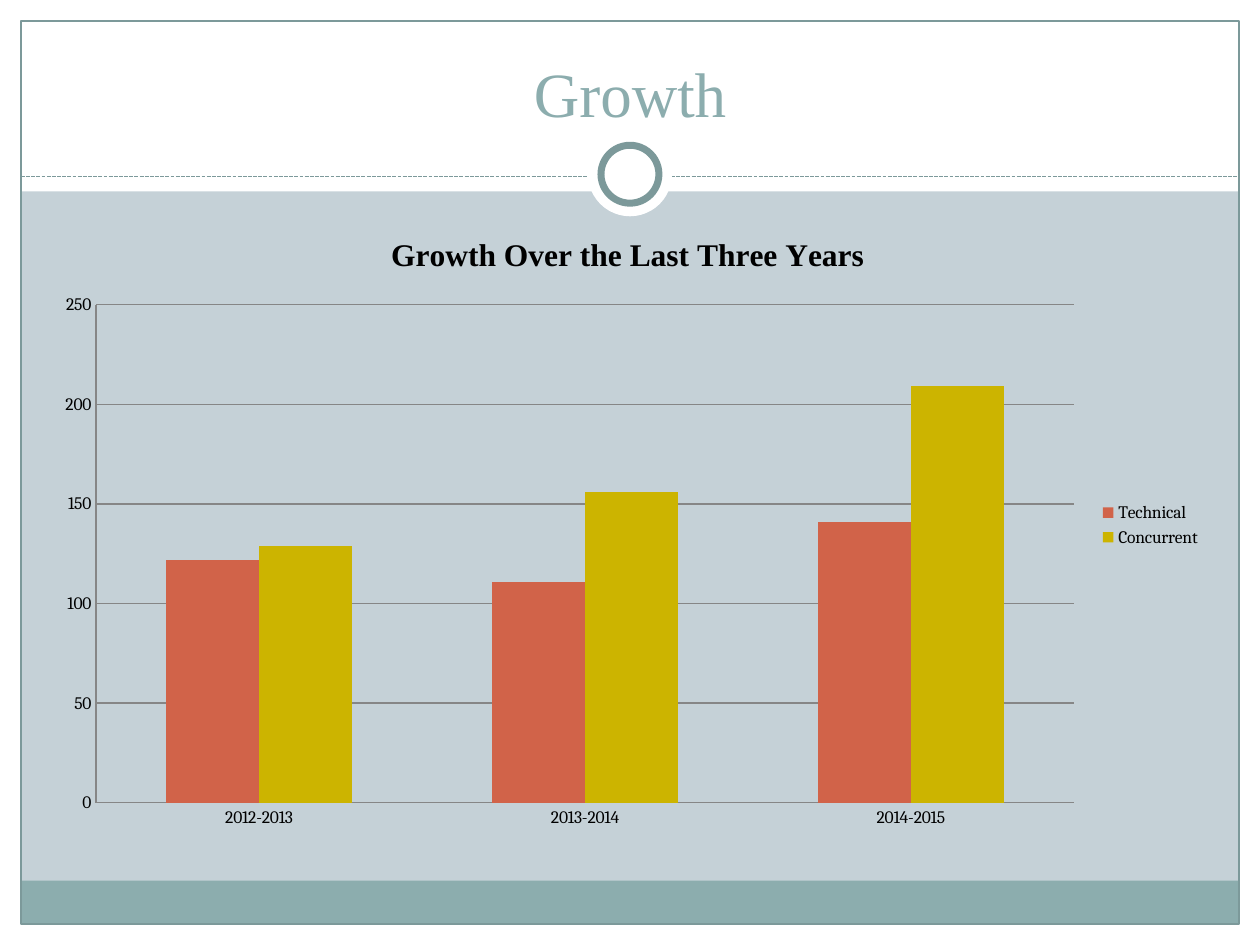
import pptx
import pptx.chart.data
import pptx.dml.color
import pptx.enum.chart
import pptx.enum.dml
import pptx.enum.shapes
import pptx.enum.text
import pptx.oxml
import pptx.oxml.ns
import pptx.util

CELL = pptx.util.Inches(10) / 60
COLUMNS, ROWS = 60, 45
WHITE, TEAL, SLATE, MIST = "FFFFFF", "8CADAE", "7C999A", "C5D1D7"
BLACK, GRID_GRAY = "000000", "868686"
HEADING_FONT, LABEL_FONT = "Times New Roman", "Cambria"
YEARS = ["2012-2013", "2013-2014", "2014-2015"]
ENROLMENT = [
    ("Technical", (122, 111, 141), "D16349"),
    ("Concurrent", (129, 156, 209), "CCB400"),
]


def color(hex_code):
    """Turn a hex string into a colour."""
    return pptx.dml.color.RGBColor.from_string(hex_code)


def cells(*counts):
    """Turn counts of grid cells into lengths."""
    return [pptx.util.Emu(round(count * CELL)) for count in counts]


def set_font(font, size, hue=BLACK, face=LABEL_FONT, bold=False):
    """Set the size, colour, face and weight of a font."""
    font.size = pptx.util.Pt(size)
    font.color.rgb = color(hue)
    font.name = face
    font.bold = bold


def write(frame, text, **style):
    """Put centred, formatted text in a text frame."""
    paragraph = frame.paragraphs[0]
    paragraph.alignment = pptx.enum.text.PP_ALIGN.CENTER
    run = paragraph.add_run()
    run.text = text
    set_font(run.font, **style)


def add_block(slide, kind, box, fill=None, line=None, weight=0.75):
    """Draw a preset shape in a box of grid cells."""
    block = slide.shapes.add_shape(kind, *cells(*box))
    block.shadow.inherit = False
    if fill:
        block.fill.solid()
        block.fill.fore_color.rgb = color(fill)
    else:
        block.fill.background()
    if line:
        block.line.color.rgb = color(line)
        block.line.width = pptx.util.Pt(weight)
    else:
        block.line.fill.background()


def add_frame(slide, box):
    """Draw the white margins, header, footer band and border."""
    left, top, width, height = box
    rectangle = pptx.enum.shapes.MSO_SHAPE.RECTANGLE
    margins = [
        (left, top + height - 1, width, 1),
        (left, top, width, 9.12),
        (left, top, 1, height),
        (left + width - 1, top, 1, height),
    ]
    for margin in margins:
        add_block(slide, rectangle, margin, fill=WHITE)
    add_block(slide, rectangle, (left + 1, top + height - 3.06, width - 2, 2.06), fill=TEAL)
    add_block(slide, rectangle, (left + 1, top + 1, width - 2, height - 2), line=SLATE)


def add_divider(slide, box):
    """Draw the dashed rule with a ring at its centre."""
    left, top, width, height = box
    middle = top + height / 2
    rule = slide.shapes.add_connector(
        pptx.enum.shapes.MSO_CONNECTOR.STRAIGHT,
        *cells(left, middle + 0.1, left + width, middle + 0.1))
    rule.line.color.rgb = color(SLATE)
    rule.line.width = pptx.util.Pt(0.75)
    rule.line.dash_style = pptx.enum.dml.MSO_LINE.SQUARE_DOT
    rule._element.spPr.append(pptx.oxml.parse_xml(
        f'<a:effectLst {pptx.oxml.ns.nsdecls("a")}/>'))
    for size, outline in ((height, None), (height * 0.69, SLATE)):
        ring = (left + (width - size) / 2, middle - size / 2, size, size)
        add_block(slide, pptx.enum.shapes.MSO_SHAPE.OVAL, ring,
                  fill=WHITE, line=outline, weight=4)


def add_title(slide, box):
    """Write the slide title at the bottom of its box."""
    frame = slide.shapes.add_textbox(*cells(*box)).text_frame
    frame.word_wrap = True
    frame.vertical_anchor = pptx.enum.text.MSO_ANCHOR.BOTTOM
    write(frame, "Growth", size=36, hue=TEAL, face=HEADING_FONT)


def add_growth_chart(slide, box):
    """Draw the clustered columns of growth by year."""
    growth = pptx.chart.data.CategoryChartData()
    growth.categories = YEARS
    for name, counts, _ in ENROLMENT:
        growth.add_series(name, counts)
    chart = slide.shapes.add_chart(
        pptx.enum.chart.XL_CHART_TYPE.COLUMN_CLUSTERED, *cells(*box), growth).chart
    set_font(chart.font, 10)
    chart.has_title = True
    write(chart.chart_title.text_frame, "Growth Over the Last Three Years",
          size=18, face=HEADING_FONT, bold=True)
    chart.chart_title.include_in_layout = False
    chart.has_legend = True
    chart.legend.position = pptx.enum.chart.XL_LEGEND_POSITION.RIGHT
    chart.legend.include_in_layout = False

    plot = chart.plots[0]
    plot.gap_width = 150
    plot.overlap = 0
    plot.vary_by_categories = False
    for series, (_, _, hue) in zip(plot.series, ENROLMENT):
        series.format.fill.solid()
        series.format.fill.fore_color.rgb = color(hue)

    years, counts = chart.category_axis, chart.value_axis
    counts.minimum_scale, counts.maximum_scale, counts.major_unit = 0, 250, 50
    counts.has_major_gridlines = True
    for axis in (years, counts):
        axis.major_tick_mark = pptx.enum.chart.XL_TICK_MARK.NONE
    for part in (years, counts, counts.major_gridlines):
        part.format.line.color.rgb = color(GRID_GRAY)
        part.format.line.width = pptx.util.Pt(0.75)


def main():
    """Build the growth slide."""
    deck = pptx.Presentation()
    deck.slide_width, deck.slide_height = cells(COLUMNS, ROWS)
    slide = deck.slides.add_slide(deck.slide_layouts[6])
    slide.background.fill.solid()
    slide.background.fill.fore_color.rgb = color(MIST)
    add_frame(slide, (0, 0, COLUMNS, ROWS))
    add_divider(slide, (1, 6.3, COLUMNS - 2, 4))
    add_title(slide, (2, 1.5, COLUMNS - 4, 5))
    add_growth_chart(slide, (2, 10, 55.8, 30))
    deck.save("out.pptx")


if __name__ == "__main__":
    main()
